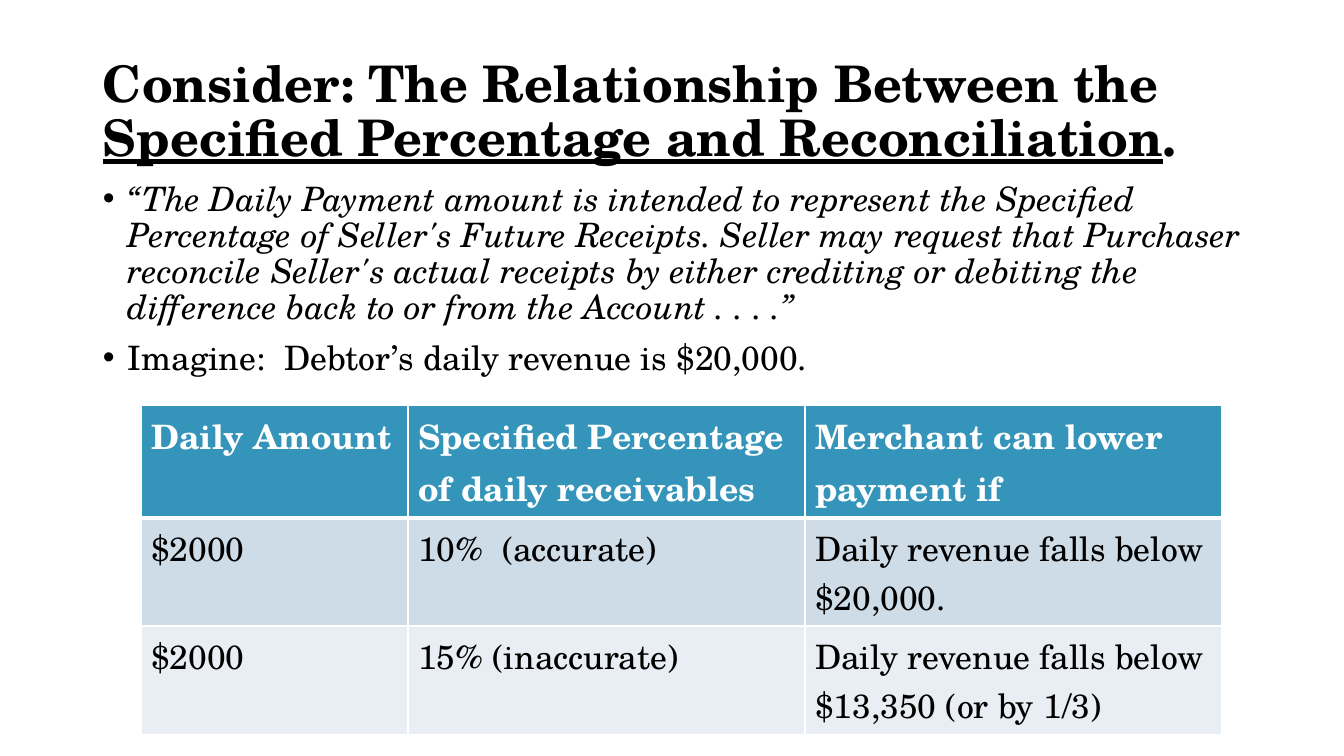
"""Build the slide on the specified percentage and reconciliation."""
from dataclasses import dataclass

from lxml import etree
from pptx import Presentation
from pptx.dml.color import RGBColor
from pptx.enum.text import MSO_ANCHOR
from pptx.oxml.ns import qn
from pptx.util import Emu, Pt

MIDDLE = MSO_ANCHOR.MIDDLE
TOP = MSO_ANCHOR.TOP
PX = 9071


@dataclass(frozen=True)
class Theme:
    font: str = "TeX Gyre Schola"
    title_size: int = 36
    body_size: int = 24
    ink: str = "000000"
    paper: str = "FFFFFF"
    header: str = "3494BA"
    bands: tuple = ("CEDCE7", "E8EEF3")


theme = Theme()


def add_span(para, text, size, color, bold=False, italic=False, underline=False):
    span = para.add_run()
    span.text = text
    span.font.name = theme.font
    span.font.size = Pt(size)
    span.font.color.rgb = RGBColor.from_string(color)
    span.font.bold = bold
    span.font.italic = italic
    span.font.underline = underline


def add_box(page, left, top, width, height, anchor):
    box = page.shapes.add_textbox(*(Emu(n * PX) for n in (left, top, width, height)))
    box.text_frame.word_wrap = True
    box.text_frame.vertical_anchor = anchor
    return box.text_frame


deck = Presentation()
deck.slide_width = Emu(1344 * PX)
deck.slide_height = Emu(756 * PX)
page = deck.slides.add_slide(deck.slide_layouts[6])

title = add_box(page, 93, 40, 1159, 146, MIDDLE).paragraphs[0]
title.line_spacing = 0.9
for text, underline in (
    ("Consider: The Relationship Between the ", False),
    ("Specified Percentage and Reconciliation", True),
    (".", False),
):
    add_span(title, text, theme.title_size, theme.ink, bold=True, underline=underline)

body = add_box(page, 93, 177, 1159, 480, TOP)
points = (
    ("“The Daily Payment amount is intended to represent the Specified Percentage "
     "of Seller's Future Receipts. Seller may request that Purchaser reconcile "
     "Seller's actual receipts by either crediting or debiting the difference back "
     "to or from the Account . . . .”", True),
    ("Imagine:  Debtor’s daily revenue is $20,000.", False),
)
for index, (text, italic) in enumerate(points):
    para = body.add_paragraph() if index else body.paragraphs[0]
    para.line_spacing = 0.9
    para.space_before = Pt(10 if index else 0)
    properties = para._p.get_or_add_pPr()
    properties.set("marL", str(25 * PX))
    properties.set("indent", str(-25 * PX))
    etree.SubElement(properties, qn("a:buFont"), typeface="Arial")
    etree.SubElement(properties, qn("a:buChar"), char="•")
    add_span(para, text, theme.body_size, theme.ink, italic=italic)

rows = (
    ("Daily Amount", "Specified Percentage of daily receivables",
     "Merchant can lower payment if"),
    ("$2000", "10%  (accurate)", "Daily revenue falls below $20,000."),
    ("$2000", "15% (inaccurate)", "Daily revenue falls below $13,350 (or by 1/3)"),
)
column_widths = (267, 397, 417)
row_heights = (113, 108, 109)
table = page.shapes.add_table(
    len(rows), len(column_widths), Emu(141 * PX), Emu(405 * PX),
    Emu(sum(column_widths) * PX), Emu(sum(row_heights) * PX)).table
for column, width in zip(table.columns, column_widths):
    column.width = Emu(width * PX)
for row, height in zip(table.rows, row_heights):
    row.height = Emu(height * PX)

for row_index, texts in enumerate(rows):
    is_header = row_index == 0
    fill = theme.header if is_header else theme.bands[row_index - 1]
    color = theme.paper if is_header else theme.ink
    for column_index, text in enumerate(texts):
        cell = table.cell(row_index, column_index)
        add_span(cell.text_frame.paragraphs[0], text, theme.body_size, color, bold=is_header)
        properties = cell._tc.get_or_add_tcPr()
        for side in "LRTB":
            heavy = (is_header and side == "B") or (row_index == 1 and side == "T")
            line = etree.SubElement(properties, qn(f"a:ln{side}"), w=str(Pt(3 if heavy else 1)))
            paint = etree.SubElement(line, qn("a:solidFill"))
            etree.SubElement(paint, qn("a:srgbClr"), val=theme.paper)
        cell.fill.solid()
        cell.fill.fore_color.rgb = RGBColor.from_string(fill)

deck.save("out.pptx")
